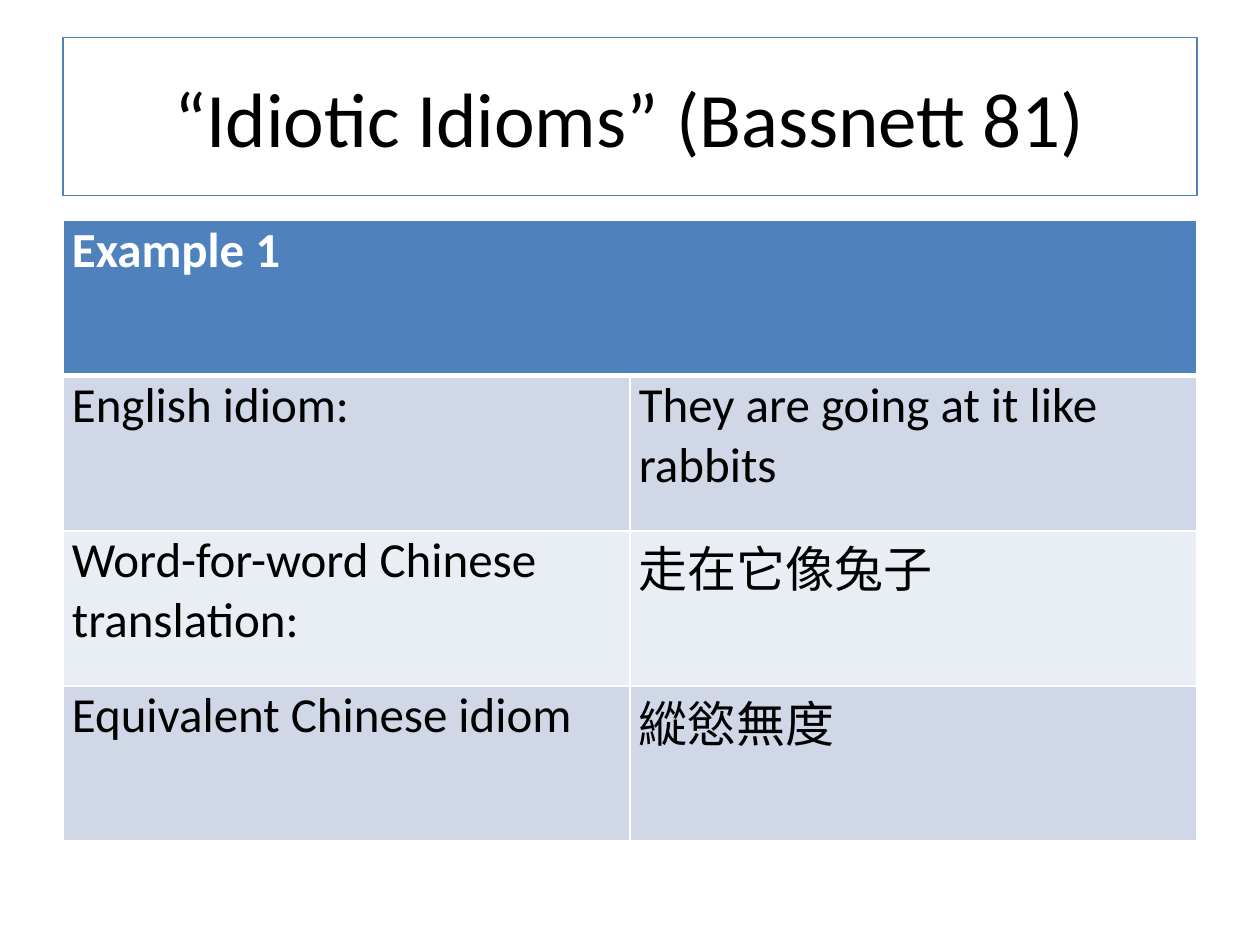
from lxml.etree import SubElement
from pptx import Presentation
from pptx.dml.color import RGBColor as RGB
from pptx.enum.text import MSO_ANCHOR as Anchor, PP_ALIGN as Align
from pptx.oxml.ns import qn
from pptx.util import Cm, Pt

# Content: each cell is a list of (text, font role) runs
TITLE = "“Idiotic Idioms” (Bassnett 81)"
ROWS = [
    [[("Example 1", "body")]],
    [[("English idiom:", "body")],
     [("They are going at it like rabbits", "body")]],
    [[("Word-for-word Chinese translation:", "body")],
     [("走在它像兔", "accent"), ("子", "body")]],
    [[("Equivalent Chinese idiom", "body")],
     [("縱慾無", "accent"), ("度", "body")]],
]

THEME = {
    "fonts": {"body": "Calibri", "accent": "Karla"},
    "title_size": Pt(44), "table_size": Pt(28),
    "text": "000000", "header_text": "FFFFFF",
    "header": "4F81BD", "bands": ("D0D8E8", "E9EDF4"),
    "outline": "4F81BD", "border": "FFFFFF",
}

# Layout
SLIDE_WIDTH, SLIDE_HEIGHT = Cm(25.4), Cm(19.05)
MARGIN = Cm(1.27)
CONTENT_WIDTH = SLIDE_WIDTH - 2 * MARGIN
TITLE_TOP, TITLE_HEIGHT = Cm(0.76), Cm(3.18)
TABLE_TOP, TABLE_HEIGHT = Cm(4.45), Cm(12.5)
COLUMNS = 2


def apply(target, **values):
    for name, value in values.items():
        setattr(target, name, value)


def add_run(paragraph, text, role, size, color, bold=False):
    run = paragraph.add_run()
    run.text = text
    apply(run.font, name=THEME["fonts"][role], size=size, bold=bold)
    run.font.color.rgb = RGB.from_string(color)


def set_borders(cell, bottom_width):
    properties = cell._tc.get_or_add_tcPr()
    widths = {"a:lnL": 1, "a:lnR": 1, "a:lnT": 1, "a:lnB": bottom_width}
    for position, (tag, width) in enumerate(widths.items()):
        line = SubElement(properties, qn(tag), w=str(Pt(width)))
        fill = SubElement(line, qn("a:solidFill"))
        SubElement(fill, qn("a:srgbClr"), val=THEME["border"])
        properties.insert(position, line)  # borders come before the fill


def add_title(slide):
    title = slide.shapes.title
    apply(title, left=MARGIN, top=TITLE_TOP,
          width=CONTENT_WIDTH, height=TITLE_HEIGHT)
    title.line.color.rgb = RGB.from_string(THEME["outline"])
    title.line.width = Pt(0.75)
    title.text_frame.vertical_anchor = Anchor.MIDDLE
    paragraph = title.text_frame.paragraphs[0]
    paragraph.alignment = Align.CENTER
    add_run(paragraph, TITLE, "body", THEME["title_size"], THEME["text"])


def add_idiom_table(slide):
    table = slide.shapes.add_table(len(ROWS), COLUMNS, MARGIN, TABLE_TOP,
                                   CONTENT_WIDTH, TABLE_HEIGHT).table
    table.cell(0, 0).merge(table.cell(0, COLUMNS - 1))
    for row, contents in enumerate(ROWS):
        header = row == 0
        fill = THEME["header"] if header else THEME["bands"][(row - 1) % 2]
        color = THEME["header_text" if header else "text"]
        for column in range(COLUMNS):
            cell = table.cell(row, column)
            apply(cell, margin_left=Cm(0.18), margin_right=Cm(0.18),
                  margin_top=0, margin_bottom=0, vertical_anchor=Anchor.TOP)
            cell.fill.solid()
            cell.fill.fore_color.rgb = RGB.from_string(fill)
            set_borders(cell, 3 if header else 1)
            if column < len(contents):
                paragraph = cell.text_frame.paragraphs[0]
                for text, role in contents[column]:
                    add_run(paragraph, text, role, THEME["table_size"],
                            color, header)


def main():
    presentation = Presentation()
    apply(presentation, slide_width=SLIDE_WIDTH, slide_height=SLIDE_HEIGHT)
    slide = presentation.slides.add_slide(presentation.slide_layouts[5])
    add_title(slide)
    add_idiom_table(slide)
    presentation.save("out.pptx")


if __name__ == "__main__":
    main()
